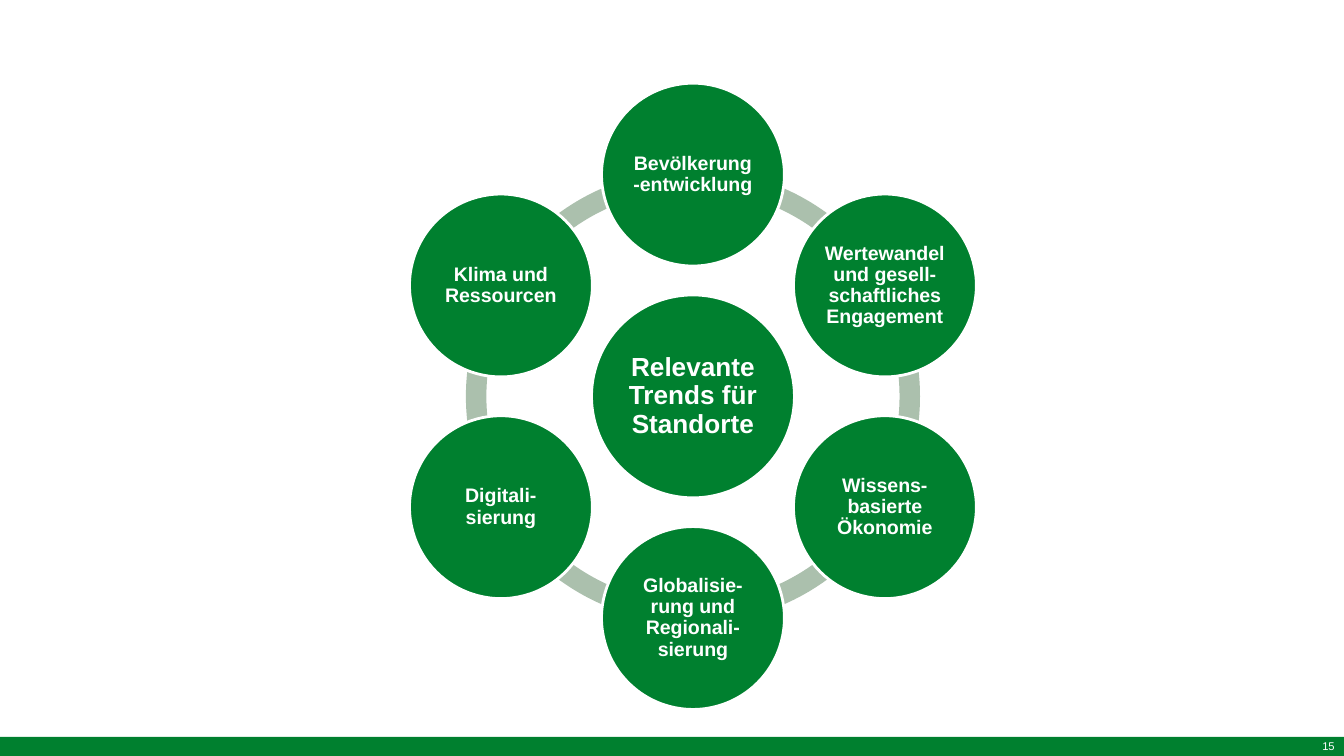
from collections import namedtuple
from math import cos, radians, sin

from pptx import Presentation
from pptx.dml.color import RGBColor
from pptx.enum.shapes import MSO_SHAPE
from pptx.enum.text import MSO_ANCHOR, PP_ALIGN
from pptx.util import Pt

ELLIPSE = MSO_SHAPE.OVAL
BLOCK_ARC = MSO_SHAPE.BLOCK_ARC
RECTANGLE = MSO_SHAPE.RECTANGLE
MIDDLE = MSO_ANCHOR.MIDDLE
CENTER = PP_ALIGN.CENTER
RIGHT = PP_ALIGN.RIGHT

GREEN = "00802F"
PALE_GREEN = "ABC0AD"
WHITE = "FFFFFF"

HUB = "Relevante Trends für Standorte"
TRENDS = [
    "Bevölkerung-entwicklung",
    "Wertewandel und gesell-schaftliches Engagement",
    "Wissens-basierte Ökonomie",
    "Globalisie-rung und Regionali-sierung",
    "Digitali-sierung",
    "Klima und Ressourcen",
]

Box = namedtuple("Box", "left top width height")


def color(value):
    return RGBColor.from_string(value)


def lengths(box):
    return [Pt(value) for value in box]


def square(x, y, side):
    return Box(x - side / 2, y - side / 2, side, side)


def add_filled(page, kind, box, fill):
    shape = page.shapes.add_shape(kind, *lengths(box))
    shape.shadow.inherit = False
    shape.fill.solid()
    shape.fill.fore_color.rgb = color(fill)
    shape.line.fill.background()
    return shape


def write(frame, text, size, align, bold, insets):
    frame.word_wrap = True
    frame.vertical_anchor = MIDDLE
    frame.margin_left, frame.margin_top, frame.margin_right, frame.margin_bottom = lengths(insets)
    para = frame.paragraphs[0]
    para.text = text
    para.alignment = align
    para.font.name = "Arial"
    para.font.size = Pt(size)
    para.font.bold = bold
    para.font.color.rgb = color(WHITE)
    return para


def add_disc(page, box, text, size):
    disc = add_filled(page, ELLIPSE, box, GREEN)
    disc.line.color.rgb = color(WHITE)
    disc.line.width = Pt(1.5)
    para = write(disc.text_frame, text, size, CENTER, True, (1.5, 1.5, 1.5, 1.5))
    para.line_spacing = 0.9


def add_wheel(page, box, hub, trends):
    x = box.left + box.width / 2
    y = box.top + box.height / 2
    disc_size = box.height * 0.292
    orbit = (box.height - disc_size) / 2
    step = 360 / len(trends)
    angles = [index * step - 90 for index in range(len(trends))]
    for angle in angles:
        arc = add_filled(page, BLOCK_ARC, square(x, y, box.height * 0.725), PALE_GREEN)
        arc.adjustments[0] = angle % 360 * 0.6
        arc.adjustments[1] = (angle + step) % 360 * 0.6
        arc.adjustments[2] = 0.045
    add_disc(page, square(x, y, box.height * 0.324), hub, 14)
    for angle, trend in zip(angles, trends):
        disc_x = x + orbit * cos(radians(angle))
        disc_y = y + orbit * sin(radians(angle))
        add_disc(page, square(disc_x, disc_y, disc_size), trend, 10.5)


def add_footer(page, box, number):
    add_filled(page, RECTANGLE, box, GREEN)
    number_box = Box(box.left + box.width - 172.8, box.top - 5.75, 167.8, 21.6)
    label = page.shapes.add_textbox(*lengths(number_box))
    write(label.text_frame, number, 6, RIGHT, False, (5, 2.9, 0, 2.9))


def main():
    deck = Presentation()
    deck.slide_width = Pt(720)
    deck.slide_height = Pt(405)
    page = deck.slides.add_slide(deck.slide_layouts[6])
    add_footer(page, Box(0, 394.75, 720, 10.25), "15")
    add_wheel(page, Box(203.5, 44.6, 335.5, 335.5), HUB, TRENDS)
    deck.save("out.pptx")


if __name__ == "__main__":
    main()
